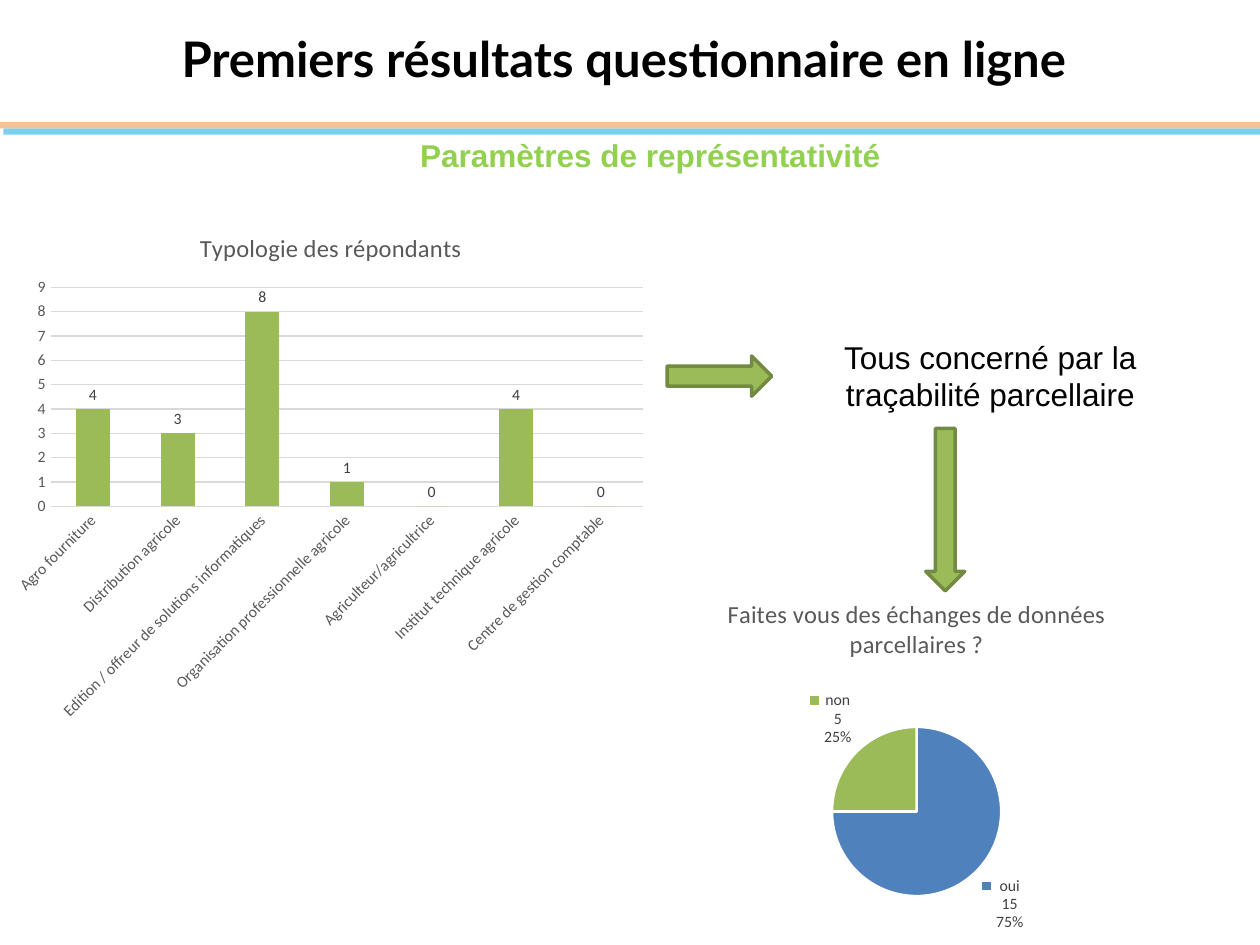
import lxml.etree
import pptx
import pptx.chart.data
import pptx.dml.color
import pptx.enum.chart
import pptx.enum.shapes
import pptx.enum.text
import pptx.oxml.ns
import pptx.util
from dataclasses import dataclass

Pt = pptx.util.Pt
RGB = pptx.dml.color.RGBColor.from_string
qn = pptx.oxml.ns.qn
CENTER = pptx.enum.text.PP_ALIGN.CENTER
SHAPE = pptx.enum.shapes.MSO_SHAPE
CHART = pptx.enum.chart.XL_CHART_TYPE
LABEL = pptx.enum.chart.XL_LABEL_POSITION


@dataclass
class Theme:
    black = RGB("000000")
    white = RGB("FFFFFF")
    sky = RGB("7BD0EF")
    peach = RGB("FAC090")
    lime = RGB("92D050")
    green = RGB("9BBB59")
    dark_green = RGB("738A42")
    blue = RGB("4F81BD")
    grid = RGB("D9D9D9")
    axis = RGB("595959")
    label = RGB("404040")
    title_size = Pt(28)
    body_size = Pt(18)
    chart_title_size = Pt(14)
    chart_size = Pt(9)


theme = Theme()


def style_font(font, name, size, color, bold=False):
    font.name = name
    font.size = size
    font.color.rgb = color
    font.bold = bold


def add_styled_chart(kind, box, title, categories, values, plot_box):
    data = pptx.chart.data.CategoryChartData()
    data.categories = categories
    data.add_series("Series 1", values)
    chart = slide.shapes.add_chart(kind, *map(Pt, box), data).chart
    style_font(chart.font, "Calibri", Pt(10), theme.black)
    chart.has_legend = False
    chart.has_title = True
    chart.chart_title.include_in_layout = False
    chart.chart_title.text_frame.text = title
    run = chart.chart_title.text_frame.paragraphs[0].runs[0]
    style_font(run.font, "Calibri", theme.chart_title_size, theme.axis)

    plot_area = chart.plots[0]._element.getparent()
    for old_layout in plot_area.findall(qn("c:layout")):
        plot_area.remove(old_layout)
    layout = lxml.etree.Element(qn("c:layout"))
    plot_area.insert(0, layout)
    manual = lxml.etree.SubElement(layout, qn("c:manualLayout"))
    settings = [("layoutTarget", "inner"), ("xMode", "edge"), ("yMode", "edge")]
    for tag, value in settings + list(zip("xywh", plot_box)):
        lxml.etree.SubElement(manual, qn(f"c:{tag}")).set("val", str(value))

    plot = chart.plots[0]
    plot.vary_by_categories = kind == CHART.PIE
    plot.has_data_labels = True
    labels = plot.data_labels
    labels.show_value = True
    labels.position = LABEL.OUTSIDE_END
    style_font(labels.font, "Calibri", theme.chart_size, theme.label)
    return chart


presentation = pptx.Presentation()
presentation.slide_width = Pt(720)
presentation.slide_height = Pt(540)
slide = presentation.slides.add_slide(presentation.slide_layouts[5])

for left, top, color in [(2, 73.4, theme.sky), (0, 69.8, theme.peach)]:
    band = slide.shapes.add_shape(SHAPE.RECTANGLE, Pt(left), Pt(top), Pt(720), Pt(3.6))
    band.shadow.inherit = False
    band.fill.solid()
    band.fill.fore_color.rgb = color
    band.line.fill.background()

title = slide.shapes.title
title.left, title.top, title.width, title.height = map(Pt, (2.9, 5.8, 707, 54.7))
title.text_frame.text = "Premiers résultats questionnaire en ligne"
title.text_frame.vertical_anchor = pptx.enum.text.MSO_ANCHOR.MIDDLE
title.text_frame.paragraphs[0].alignment = CENTER
style_font(title.text_frame.paragraphs[0].runs[0].font, "Lato", theme.title_size, theme.black, True)

for box, text, color, bold in [
    ((452.9, 189.4, 226, 51), "Tous concerné par la traçabilité parcellaire", theme.black, False),
    ((52.6, 74.2, 690.2 - 0, 29), "Paramètres de représentativité", theme.lime, True),
]:
    left, top, width, height = box
    width = min(width, 638)
    text_box = slide.shapes.add_textbox(Pt(left), Pt(top), Pt(width), Pt(height))
    text_box.text_frame.word_wrap = True
    text_box.text_frame.text = text
    paragraph = text_box.text_frame.paragraphs[0]
    paragraph.alignment = CENTER
    style_font(paragraph.runs[0].font, "Arial", theme.body_size, color, bold)

for box, rotation in [((399.6, 185, 23, 59.8), 270), ((529, 244.8, 22.3, 92.9), 0)]:
    arrow = slide.shapes.add_shape(SHAPE.DOWN_ARROW, *map(Pt, box))
    arrow.rotation = rotation
    arrow.shadow.inherit = False
    arrow.fill.solid()
    arrow.fill.fore_color.rgb = theme.green
    arrow.line.color.rgb = theme.dark_green
    arrow.line.width = Pt(2)

respondents = {
    "Agro fourniture": 4,
    "Distribution agricole": 3,
    "Edition / offreur de solutions informatiques": 8,
    "Organisation professionnelle agricole": 1,
    "Agriculteur/agricultrice": 0,
    "Institut technique agricole": 4,
    "Centre de gestion comptable": 0,
}
column_chart = add_styled_chart(
    CHART.COLUMN_CLUSTERED, (2.9, 119.5, 372.2, 298), "Typologie des répondants",
    list(respondents), list(respondents.values()), (0.07, 0.15, 0.91, 0.42))
column_chart.plots[0].gap_width = 150
columns = column_chart.plots[0].series[0]
columns.format.fill.solid()
columns.format.fill.fore_color.rgb = theme.green
for axis in (column_chart.category_axis, column_chart.value_axis):
    axis.major_tick_mark = pptx.enum.chart.XL_TICK_MARK.NONE
    axis.minor_tick_mark = pptx.enum.chart.XL_TICK_MARK.NONE
    axis.format.line.fill.background()
    style_font(axis.tick_labels.font, "Calibri", theme.chart_size, theme.axis)
category_text = column_chart.category_axis._element.find(qn("c:txPr"))
category_text.find(qn("a:bodyPr")).set("rot", "-2700000")
value_axis = column_chart.value_axis
value_axis.minimum_scale = 0
value_axis.maximum_scale = 9
value_axis.major_unit = 1
value_axis.has_major_gridlines = True
value_axis.major_gridlines.format.line.color.rgb = theme.grid
value_axis.major_gridlines.format.line.width = Pt(0.75)

pie_chart = add_styled_chart(
    CHART.PIE, (337.7, 330.5, 372.2, 216.7), "Faites vous des échanges de données parcellaires ?",
    ["oui", "non"], [15, 5], (0.37, 0.39, 0.26, 0.45))
pie_labels = pie_chart.plots[0].data_labels
pie_labels.show_category_name = True
pie_labels.show_percentage = True
pie_labels.show_legend_key = True
separator = lxml.etree.Element(qn("c:separator"))
separator.text = "\n"
pie_labels._element.find(qn("c:showBubbleSize")).addnext(separator)
for index, color in enumerate([theme.blue, theme.green]):
    point = pie_chart.plots[0].series[0].points[index]
    point.format.fill.solid()
    point.format.fill.fore_color.rgb = color
    point.format.line.color.rgb = theme.white
    point.format.line.width = Pt(1.5)

presentation.save("out.pptx")
